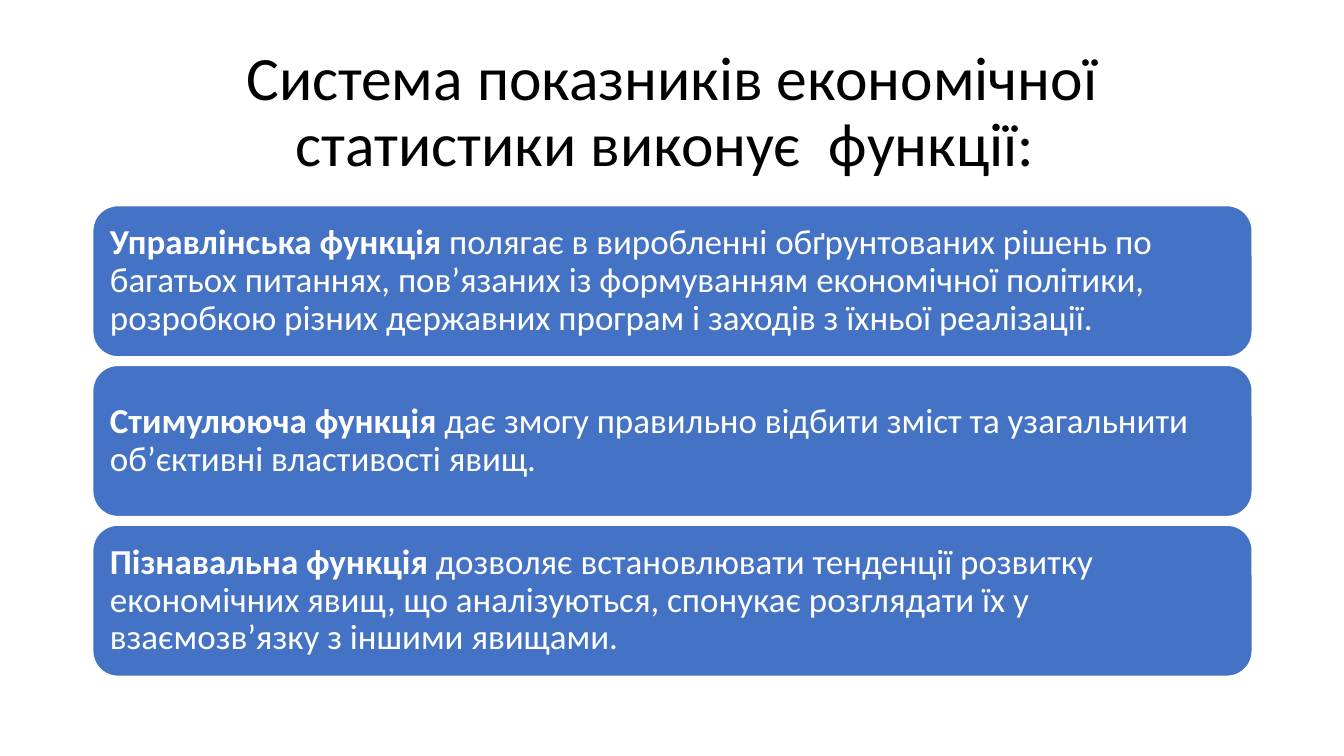
from pptx import Presentation
from pptx.dml.color import RGBColor
from pptx.enum.shapes import MSO_SHAPE as Shape
from pptx.enum.text import MSO_ANCHOR as Anchor, PP_ALIGN as Align
from pptx.util import Inches, Pt

FONT = "Calibri"
BLACK, WHITE, BLUE = "000000", "FFFFFF", "4472C4"

LEFT, WIDTH = 0.92, 11.5
TITLE_TOP, TITLE_HEIGHT = 0.4, 1.45
CARDS_TOP, CARDS_BOTTOM, CARD_HEIGHT = 2.04, 6.71, 1.5

TITLE = "Система показників економічної статистики виконує  функції: "
FUNCTIONS = [
    ("Управлінська функція ",
     "полягає в виробленні обґрунтованих рішень по багатьох питаннях, "
     "пов’язаних із формуванням економічної політики, розробкою різних "
     "державних програм і заходів з їхньої реалізації."),
    ("Стимулююча функція ",
     "дає змогу правильно відбити зміст та узагальнити об’єктивні "
     "властивості явищ."),
    ("Пізнавальна функція ",
     "дозволяє встановлювати тенденції розвитку економічних явищ, що "
     "аналізуються, спонукає розглядати їх у взаємозв’язку з іншими явищами."),
]


def color(value):
    return RGBColor.from_string(value)


def write(frame, spans, size, ink, align):
    """Fill the frame with one paragraph made of (text, bold) spans."""
    frame.word_wrap = True
    frame.vertical_anchor = Anchor.MIDDLE
    para = frame.paragraphs[0]
    para.alignment = align
    para.line_spacing = 0.9
    for text, bold in spans:
        span = para.add_run()
        span.text = text
        span.font.name = FONT
        span.font.size = Pt(size)
        span.font.bold = bold
        span.font.color.rgb = color(ink)


def add_title(page):
    box = page.shapes.add_textbox(Inches(LEFT), Inches(TITLE_TOP),
                                  Inches(WIDTH), Inches(TITLE_HEIGHT))
    write(box.text_frame, [(TITLE, False)], 44, BLACK, Align.CENTER)


def add_card(page, top, name, description):
    card = page.shapes.add_shape(Shape.ROUNDED_RECTANGLE, Inches(LEFT), Inches(top),
                                 Inches(WIDTH), Inches(CARD_HEIGHT))
    card.shadow.inherit = False
    card.fill.solid()
    card.fill.fore_color.rgb = color(BLUE)
    card.line.color.rgb = color(WHITE)
    card.line.width = Pt(1)
    frame = card.text_frame
    frame.margin_left = frame.margin_right = Inches(0.1)
    frame.margin_top = frame.margin_bottom = Inches(0.1)
    write(frame, [(name, True), (description, False)], 25, WHITE, Align.LEFT)


def main():
    deck = Presentation()
    deck.slide_width, deck.slide_height = Inches(13.33), Inches(7.5)
    page = deck.slides.add_slide(deck.slide_layouts[6])
    add_title(page)
    pitch = (CARDS_BOTTOM - CARD_HEIGHT - CARDS_TOP) / (len(FUNCTIONS) - 1)
    for row, (name, description) in enumerate(FUNCTIONS):
        add_card(page, CARDS_TOP + row * pitch, name, description)
    deck.save("out.pptx")


if __name__ == "__main__":
    main()
